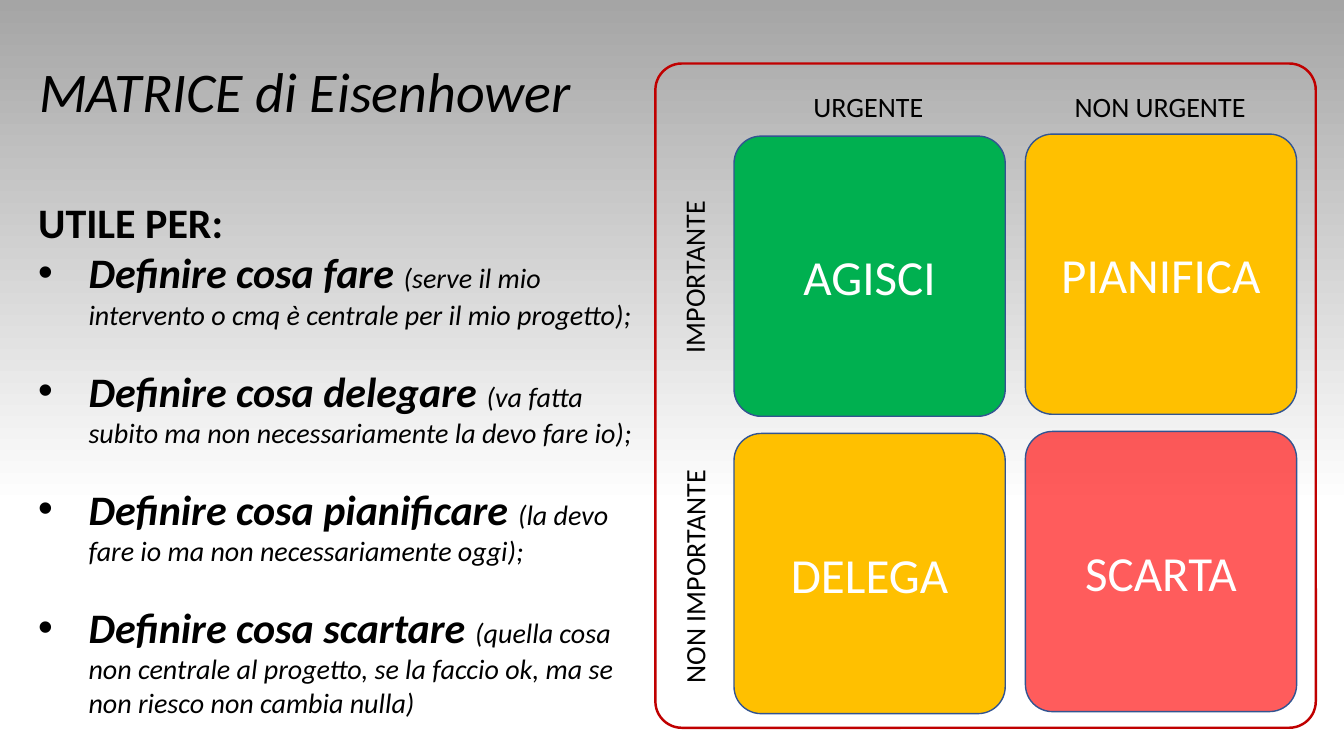
from copy import deepcopy
from dataclasses import dataclass

from lxml.etree import SubElement
from pptx import Presentation
from pptx.dml.color import RGBColor
from pptx.enum.shapes import MSO_SHAPE
from pptx.enum.text import MSO_ANCHOR, MSO_AUTO_SIZE, PP_ALIGN
from pptx.oxml.ns import qn
from pptx.util import Emu, Pt


@dataclass(frozen=True)
class Theme:
    font: str = "Calibri"
    text: str = "000000"
    card_text: str = "FFFFFF"
    frame: str = "C00000"
    card_line: str = "325491"
    green: str = "00B050"
    amber: str = "FFC000"
    red: str = "FF0000"
    background: tuple = ((0, "FFFFFF"), (33, "FFFFFF"), (100, "A5A5A5"))
    title_size: int = 40
    card_size: int = 35
    heading_size: int = 30
    body_size: int = 20
    item_gap: float = 24.4


THEME = Theme()
EMU_PER_PX = 9144

CARD_SIZE = (269, 278)
CARD_LEFTS = (728, 1017)
CARD_TOPS = (133, 428)
LEFT_COLUMN_DROP = 2
CARDS = (
    (("AGISCI", THEME.green, 100), ("PIANIFICA", THEME.amber, 100)),
    (("DELEGA", THEME.amber, 100), ("SCARTA", THEME.red, 64)),
)
AXIS_LABELS = (
    ("URGENTE", (797, 84, 130, 44), 0),
    ("NON URGENTE", (1056, 84, 191, 44), 0),
    ("NON IMPORTANTE", (572, 549, 234, 44), 270),
    ("IMPORTANTE", (602, 252, 173, 44), 270),
)
USES = (
    ("Definire cosa fare ",
     "(serve il mio intervento o cmq è centrale per il mio progetto);"),
    ("Definire cosa delegare ",
     "(va fatta subito ma non necessariamente la devo fare io);"),
    ("Definire cosa pianificare ",
     "(la devo fare io ma non necessariamente oggi);"),
    ("Definire cosa scartare ",
     "(quella cosa non centrale al progetto, se la faccio ok, "
     "ma se non riesco non cambia nulla)"),
)


def px(value):
    return Emu(value * EMU_PER_PX)


def color(value):
    return RGBColor.from_string(value)


def add_run(paragraph, text, size, text_color=THEME.text, **styles):
    run = paragraph.add_run()
    run.text = text
    run.font.color.rgb = color(text_color)
    formats = {"name": THEME.font, "size": Pt(size), **styles}
    for name, value in formats.items():
        setattr(run.font, name, value)


def add_text_box(slide, box, wrap=True, rotation=0):
    shape = slide.shapes.add_textbox(*map(px, box))
    shape.rotation = rotation
    shape.text_frame.word_wrap = wrap
    shape.text_frame.auto_size = MSO_AUTO_SIZE.SHAPE_TO_FIT_TEXT
    return shape.text_frame


def add_rounded_box(shapes, box, radius, line_color, line_width):
    shape = shapes.add_shape(MSO_SHAPE.ROUNDED_RECTANGLE, *map(px, box))
    shape.adjustments[0] = radius
    shape.shadow.inherit = False
    shape.fill.background()
    shape.line.color.rgb = color(line_color)
    shape.line.width = Pt(line_width)
    return shape


def add_card(shapes, box, label, fill_color, opacity):
    shape = add_rounded_box(shapes, box, 0.1, THEME.card_line, 1)
    shape.fill.solid()
    shape.fill.fore_color.rgb = color(fill_color)
    if opacity < 100:
        fill = shape.element.spPr.find(qn("a:solidFill"))
        SubElement(fill[0], qn("a:alpha"), val=str(opacity * 1000))
    frame = shape.text_frame
    frame.vertical_anchor = MSO_ANCHOR.MIDDLE
    paragraph = frame.paragraphs[0]
    paragraph.alignment = PP_ALIGN.CENTER
    add_run(paragraph, label, THEME.card_size, THEME.card_text)


def add_matrix(slide):
    add_rounded_box(slide.shapes, (650, 63, 655, 659), 0.04, THEME.frame, 1.75)
    group = slide.shapes.add_group_shape()
    for top, row in zip(CARD_TOPS, CARDS):
        for left, drop, card in zip(CARD_LEFTS, (LEFT_COLUMN_DROP, 0), row):
            add_card(group.shapes, (left, top + drop, *CARD_SIZE), *card)
    for label, box, rotation in AXIS_LABELS:
        frame = add_text_box(slide, box, False, rotation)
        add_run(frame.paragraphs[0], label, THEME.body_size)


def add_bullet(paragraph):
    properties = paragraph._p.get_or_add_pPr()
    indent = px(50)
    properties.set("marL", str(indent))
    properties.set("indent", str(-indent))
    SubElement(properties, qn("a:buFont"), typeface="Arial")
    SubElement(properties, qn("a:buChar"), char="•")


def add_uses(slide):
    frame = add_text_box(slide, (28, 190, 622, 532))
    add_run(frame.paragraphs[0], "UTILE PER:", THEME.heading_size, bold=True)
    for index, (action, detail) in enumerate(USES):
        paragraph = frame.add_paragraph()
        add_bullet(paragraph)
        if index:
            paragraph.space_before = Pt(THEME.item_gap)
        add_run(paragraph, action, THEME.heading_size, bold=True, italic=True)
        add_run(paragraph, detail, THEME.body_size, italic=True)


def set_background(slide):
    fill = slide.background.fill
    fill.gradient()
    fill.gradient_angle = 90
    stop_list = next(slide.element.iter(qn("a:gsLst")))
    stop_list.insert(0, deepcopy(stop_list[0]))
    for stop, (position, stop_color) in zip(fill.gradient_stops, THEME.background):
        stop.position = position / 100
        stop.color.rgb = color(stop_color)


def main():
    presentation = Presentation()
    presentation.slide_width = px(1333)
    presentation.slide_height = px(750)
    slide = presentation.slides.add_slide(presentation.slide_layouts[6])
    set_background(slide)
    add_matrix(slide)
    add_uses(slide)
    title = add_text_box(slide, (29, 51, 646, 77))
    add_run(title.paragraphs[0], "MATRICE di Eisenhower", THEME.title_size, italic=True)
    presentation.save("out.pptx")


if __name__ == "__main__":
    main()
